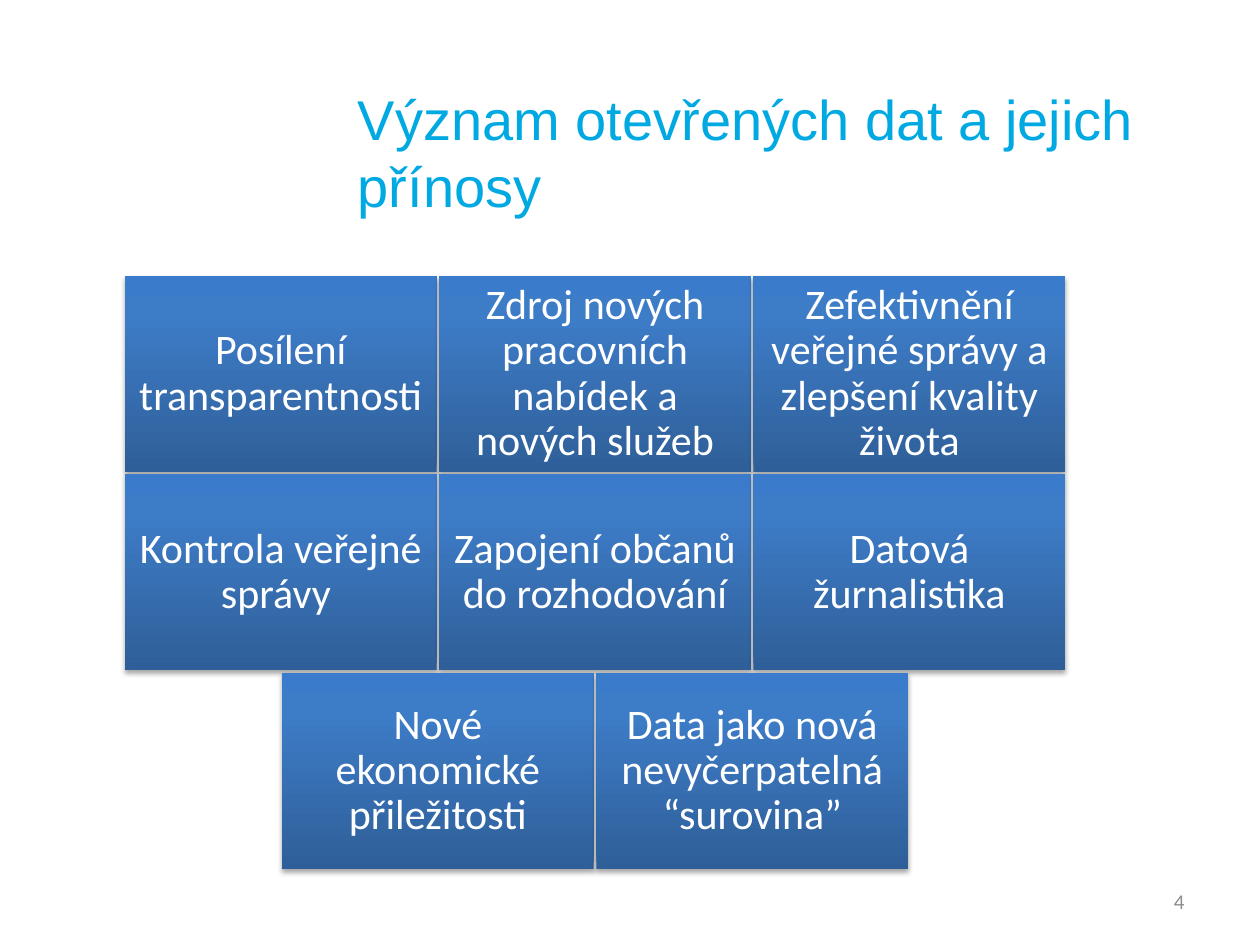
from pptx import Presentation, util as u
from pptx.dml.color import RGBColor
from pptx.enum import shapes, text
from pptx.oxml import parse_xml
from pptx.oxml.ns import nsdecls

BLUE = RGBColor(0x00, 0xA9, 0xE2)
GREY = RGBColor(0x8C, 0x8C, 0x8C)
WHITE = RGBColor(0xFF, 0xFF, 0xFF)
STOPS = [(0, RGBColor(0x2F, 0x5F, 0x99)),
         (80, RGBColor(0x3D, 0x7C, 0xC7)),
         (100, RGBColor(0x3A, 0x7C, 0xCB))]

stops = "".join(f'<a:gs pos="{pos * 1000}"><a:srgbClr val="{col}"/></a:gs>'
                for pos, col in STOPS)
GRAD = (f'<a:gradFill {nsdecls("a")} rotWithShape="1"><a:gsLst>{stops}</a:gsLst>'
        '<a:lin ang="16200000" scaled="0"/></a:gradFill>')
SHADE = (f'<a:outerShdw {nsdecls("a")} blurRad="40000" dist="23000" dir="5400000" '
         'rotWithShape="0"><a:srgbClr val="000000"><a:alpha val="35000"/>'
         '</a:srgbClr></a:outerShdw>')


def write(frame, words, size, font, color, align):
    frame.word_wrap = True
    frame.vertical_anchor = text.MSO_ANCHOR.MIDDLE
    para = frame.paragraphs[0]
    para.alignment = align
    run = para.add_run()
    run.text = words
    run.font.size = u.Pt(size)
    run.font.name = font
    run.font.color.rgb = color
    return para


deck = Presentation()
deck.slide_width, deck.slide_height = u.Inches(10), u.Inches(7.5)
slide = deck.slides.add_slide(deck.slide_layouts[5])

# Title
title = slide.shapes.title
title.left, title.top = u.Inches(2.74), u.Inches(0.58)
title.width, title.height = u.Inches(6.63), u.Inches(1.25)
write(title.text_frame, "Význam otevřených dat a jejich přínosy",
      32, "Arial", BLUE, text.PP_ALIGN.LEFT)

# Slide number
num = slide.shapes.add_textbox(u.Inches(7.17), u.Inches(6.95),
                               u.Inches(2.33), u.Inches(0.4))
write(num.text_frame, "4", 12, "Calibri", GREY, text.PP_ALIGN.RIGHT)

# Tiles: rows of three, a shorter row is centred
ROWS = [
    ["Posílení transparentnosti ",
     "Zdroj nových pracovních nabídek a nových služeb",
     "Zefektivnění veřejné správy a zlepšení kvality života"],
    ["Kontrola veřejné správy ",
     "Zapojení občanů do rozhodování",
     "Datová žurnalistika"],
    ["Nové ekonomické přiležitosti",
     "Data jako nová nevyčerpatelná “surovina”"],
]
LEFT, TOP, WIDE, HIGH, GAP = 0.99, 2.19, 2.475, 1.555, 0.02
for row, names in enumerate(ROWS):
    shift = (3 - len(names)) / 2
    for col, name in enumerate(names):
        tile = slide.shapes.add_shape(
            shapes.MSO_SHAPE.RECTANGLE,
            u.Inches(LEFT + (col + shift) * (WIDE + GAP)),
            u.Inches(TOP + row * (HIGH + GAP)),
            u.Inches(WIDE), u.Inches(HIGH))
        tile.line.fill.background()
        tile.shadow.inherit = False
        props = tile._element.spPr
        props.insert(2, parse_xml(GRAD))
        props[-1].append(parse_xml(SHADE))
        frame = tile.text_frame
        frame.margin_left = frame.margin_right = u.Inches(0.1)
        frame.margin_top = frame.margin_bottom = u.Inches(0.1)
        para = write(frame, name, 24, "Calibri", WHITE, text.PP_ALIGN.CENTER)
        para.line_spacing = 0.9

deck.save("out.pptx")
